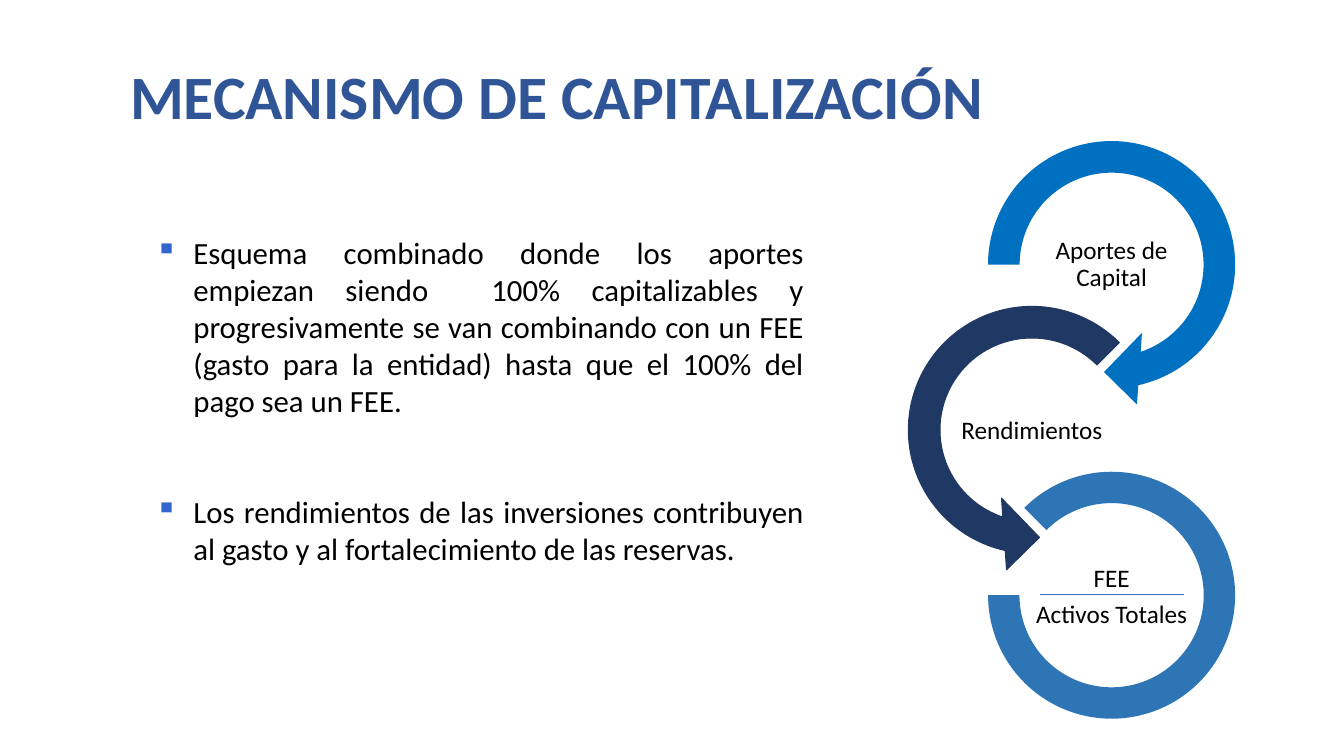
from dataclasses import dataclass
from typing import Optional

from lxml import etree
from pptx import Presentation
from pptx.dml.color import RGBColor
from pptx.enum.shapes import MSO_CONNECTOR, MSO_SHAPE
from pptx.enum.text import MSO_ANCHOR, MSO_AUTO_SIZE, PP_ALIGN
from pptx.oxml.ns import qn
from pptx.util import Inches, Pt

FONT = "Calibri"
BLACK = RGBColor(0x00, 0x00, 0x00)
TITLE_BLUE = RGBColor(0x2F, 0x55, 0x97)
BRIGHT_BLUE = RGBColor(0x00, 0x70, 0xC0)
NAVY = RGBColor(0x20, 0x38, 0x64)
MID_BLUE = RGBColor(0x2E, 0x75, 0xB6)
FRACTION_BLUE = RGBColor(0x44, 0x72, 0xC4)
BULLET_BLUE = RGBColor(0x33, 0x66, 0xCC)

RIGHT_ARROW = MSO_SHAPE.CIRCULAR_ARROW
LEFT_ARROW = MSO_SHAPE.LEFT_CIRCULAR_ARROW
RING = MSO_SHAPE.BLOCK_ARC
STRAIGHT = MSO_CONNECTOR.STRAIGHT
MIDDLE = MSO_ANCHOR.MIDDLE
LEFT, CENTER, JUSTIFY = PP_ALIGN.LEFT, PP_ALIGN.CENTER, PP_ALIGN.JUSTIFY
FIXED, GROW = MSO_AUTO_SIZE.NONE, MSO_AUTO_SIZE.SHAPE_TO_FIT_TEXT

LABEL_WIDTH, LABEL_HEIGHT = 1.58, 0.79
BULLET_INDENT = Inches(0.38)


@dataclass
class Stage:
    kind: MSO_SHAPE
    left: float
    top: float
    size: float
    adjustments: tuple[float, ...]
    color: RGBColor
    label: str
    label_top: float
    outline: Optional[RGBColor] = None


STAGES = [
    Stage(RIGHT_ARROW, 9.6, 1.2, 2.85, (0.11, 11.42, 45, 108, 0.125),
          BRIGHT_BLUE, "Aportes de Capital", 2.23),
    Stage(LEFT_ARROW, 8.81, 2.84, 2.85, (0.11, 11.42, 63, 189, 0.125),
          NAVY, "Rendimientos", 3.88, NAVY),
    Stage(RING, 9.8, 4.68, 2.45, (135, 108, 0.127),
          MID_BLUE, "FEE\nActivos Totales", 5.53),
]

BULLETS = [
    "Esquema combinado donde los aportes empiezan siendo  100% capitalizables y "
    "progresivamente se van combinando con un FEE (gasto para la entidad) hasta "
    "que el 100% del pago sea un FEE.",
    "Los rendimientos de las inversiones contribuyen al gasto y al "
    "fortalecimiento de las reservas.",
]


def format_text(para, size: float, color: RGBColor, align: PP_ALIGN,
                bold: bool = False) -> None:
    para.alignment = align
    for span in para.runs:
        span.font.name = FONT
        span.font.size = Pt(size)
        span.font.bold = bold
        span.font.color.rgb = color


def add_title(page) -> None:
    title = page.shapes.title
    title.left, title.top = Inches(1.19), Inches(0.26)
    title.width, title.height = Inches(9.44), Inches(1.45)
    frame = title.text_frame
    frame.text = "MECANISMO DE CAPITALIZACIÓN"
    frame.auto_size = FIXED
    frame.vertical_anchor = MIDDLE
    para = frame.paragraphs[0]
    para.line_spacing = 0.9
    format_text(para, 44, TITLE_BLUE, LEFT, bold=True)


def add_stage(page, stage: Stage) -> None:
    size = Inches(stage.size)
    arc = page.shapes.add_shape(
        stage.kind, Inches(stage.left), Inches(stage.top), size, size)
    arc.shadow.inherit = False
    for index, value in enumerate(stage.adjustments):
        arc.adjustments[index] = value
    arc.fill.solid()
    arc.fill.fore_color.rgb = stage.color
    if stage.outline is None:
        arc.line.fill.background()
    else:
        arc.line.color.rgb = stage.outline
        arc.line.width = Pt(0.75)

    label_left = stage.left + (stage.size - LABEL_WIDTH) / 2
    box = page.shapes.add_textbox(
        Inches(label_left), Inches(stage.label_top),
        Inches(LABEL_WIDTH), Inches(LABEL_HEIGHT))
    frame = box.text_frame
    frame.word_wrap = True
    frame.vertical_anchor = MIDDLE
    frame.margin_left = frame.margin_right = Inches(0.01)
    frame.margin_top = frame.margin_bottom = Inches(0.01)
    frame.text = stage.label
    for para in frame.paragraphs:
        para.line_spacing = 0.9
        para.space_after = Pt(6)
        format_text(para, 18, BLACK, CENTER)


def add_fraction_line(page) -> None:
    line = page.shapes.add_connector(
        STRAIGHT, Inches(10.32), Inches(5.9), Inches(11.74), Inches(5.9))
    line.line.color.rgb = FRACTION_BLUE
    line.line.width = Pt(0.5)
    etree.SubElement(line._element.spPr, qn("a:effectLst"))


def add_bullet_mark(para) -> None:
    properties = para._p.get_or_add_pPr()
    properties.set("marL", str(BULLET_INDENT))
    properties.set("indent", str(-BULLET_INDENT))
    color = etree.SubElement(properties, qn("a:buClr"))
    etree.SubElement(color, qn("a:srgbClr"), val=str(BULLET_BLUE))
    etree.SubElement(properties, qn("a:buChar"), char="▪")


def add_bullets(page) -> None:
    box = page.shapes.add_textbox(
        Inches(1.44), Inches(2.27), Inches(6.63), Inches(3.43))
    frame = box.text_frame
    frame.word_wrap = True
    frame.auto_size = GROW
    frame.text = "\n".join(BULLETS)
    for para in frame.paragraphs:
        format_text(para, 22, BLACK, JUSTIFY)
    frame.paragraphs[1].space_before = Pt(53)
    for para in frame.paragraphs:
        add_bullet_mark(para)


def main() -> None:
    deck = Presentation()
    deck.slide_width, deck.slide_height = Inches(13.33), Inches(7.5)
    page = deck.slides.add_slide(deck.slide_layouts[5])
    add_title(page)
    for stage in STAGES:
        add_stage(page, stage)
    add_fraction_line(page)
    add_bullets(page)
    deck.save("out.pptx")


if __name__ == "__main__":
    main()
